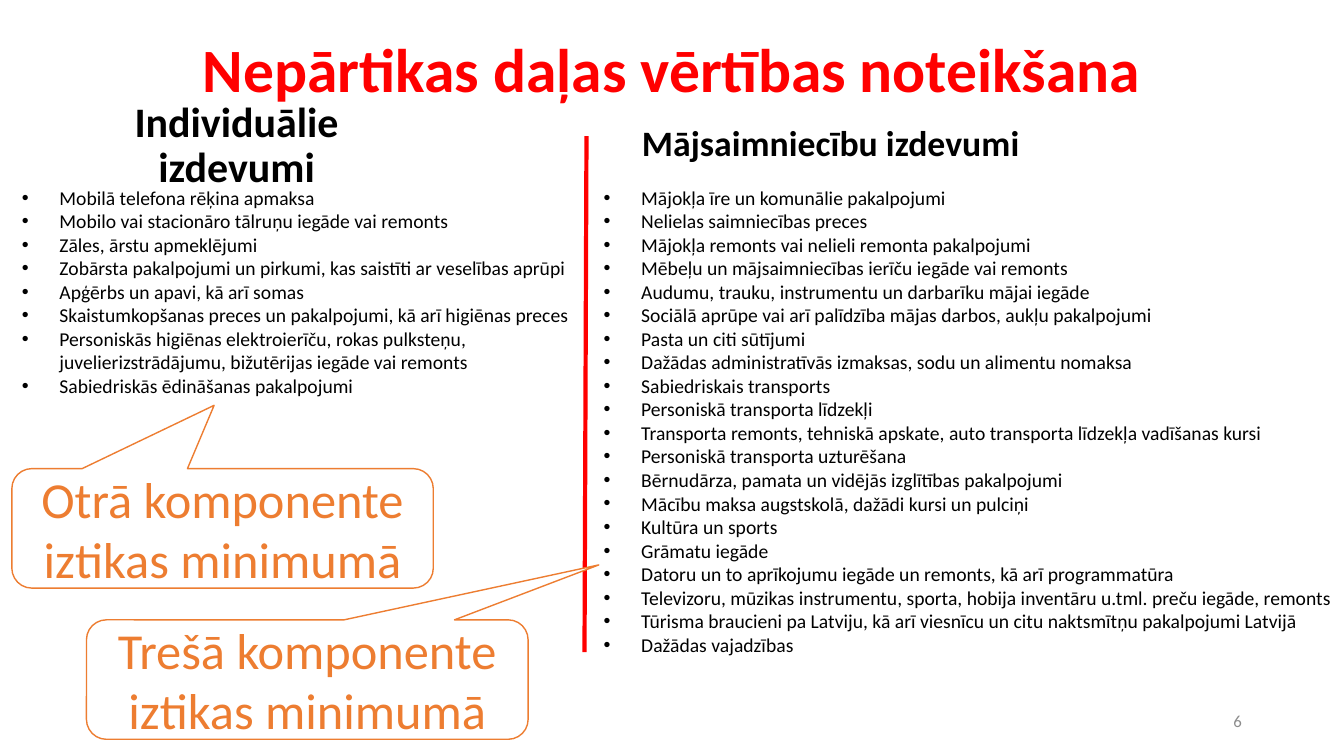
from dataclasses import dataclass

from lxml.etree import SubElement
from pptx import Presentation
from pptx.dml.color import RGBColor as Rgb
from pptx.enum.shapes import MSO_CONNECTOR as Connector, MSO_SHAPE as Preset
from pptx.enum.text import MSO_ANCHOR as Anchor, MSO_AUTO_SIZE as AutoSize, PP_ALIGN as Align
from pptx.oxml.ns import qn
from pptx.util import Cm, Pt


@dataclass(frozen=True)
class Theme:
    font: str = "Calibri"
    red: Rgb = Rgb(0xFF, 0x00, 0x00)
    orange: Rgb = Rgb(0xED, 0x7D, 0x31)
    black: Rgb = Rgb(0x00, 0x00, 0x00)
    white: Rgb = Rgb(0xFF, 0xFF, 0xFF)
    grey: Rgb = Rgb(0x8C, 0x8C, 0x8C)
    title: float = 44
    callout: float = 36
    left_heading: float = 30
    right_heading: float = 25.5
    body: float = 14
    number: float = 12


theme = Theme()


def write(box, *lines, size, color=theme.black, bold=False, align=Align.CENTER,
          anchor=Anchor.MIDDLE, spacing=1.0, bullet=False):
    frame = box.text_frame
    frame.word_wrap = True
    frame.auto_size = AutoSize.NONE
    frame.vertical_anchor = anchor
    for index, line in enumerate(lines):
        para = frame.add_paragraph() if index else frame.paragraphs[0]
        para.alignment = align
        para.line_spacing = spacing
        span = para.add_run()
        span.text = line
        span.font.name = theme.font
        span.font.size = Pt(size)
        span.font.bold = bold
        span.font.color.rgb = color
        if bullet:
            properties = para._p.get_or_add_pPr()
            properties.set("marL", str(Cm(0.95)))
            properties.set("indent", str(-Cm(0.95)))
            SubElement(properties, qn("a:buFont"), typeface="Arial")
            SubElement(properties, qn("a:buChar"), char="•")


deck = Presentation()
deck.slide_width = Cm(33.87)
deck.slide_height = Cm(19.05)
page = deck.slides.add_slide(deck.slide_layouts[5])

title = page.shapes.title
title.left, title.top, title.width, title.height = Cm(2.34), Cm(0), Cm(29.21), Cm(3.68)
write(title, "Nepārtikas daļas vērtības noteikšana", size=theme.title,
      color=theme.red, bold=True, spacing=0.9)

number = page.shapes.add_textbox(Cm(23.93), Cm(17.65), Cm(7.62), Cm(1.02))
write(number, "6", size=theme.number, color=theme.grey, align=Align.RIGHT)

individual_expenses = [
    "Mobilā telefona rēķina apmaksa",
    "Mobilo vai stacionāro tālruņu iegāde vai remonts",
    "Zāles, ārstu apmeklējumi",
    "Zobārsta pakalpojumi un pirkumi, kas saistīti ar veselības aprūpi",
    "Apģērbs un apavi, kā arī somas",
    "Skaistumkopšanas preces un pakalpojumi, kā arī higiēnas preces",
    "Personiskās higiēnas elektroierīču, rokas pulksteņu, juvelierizstrādājumu, "
    "bižutērijas iegāde vai remonts",
    "Sabiedriskās ēdināšanas pakalpojumi",
]
household_expenses = [
    "Mājokļa īre un komunālie pakalpojumi",
    "Nelielas saimniecības preces",
    "Mājokļa remonts vai nelieli remonta pakalpojumi",
    "Mēbeļu un mājsaimniecības ierīču iegāde vai remonts",
    "Audumu, trauku, instrumentu un darbarīku mājai iegāde",
    "Sociālā aprūpe vai arī palīdzība mājas darbos, aukļu pakalpojumi",
    "Pasta un citi sūtījumi",
    "Dažādas administratīvās izmaksas, sodu un alimentu nomaksa",
    "Sabiedriskais transports",
    "Personiskā transporta līdzekļi",
    "Transporta remonts, tehniskā apskate, auto transporta līdzekļa vadīšanas kursi",
    "Personiskā transporta uzturēšana",
    "Bērnudārza, pamata un vidējās izglītības pakalpojumi",
    "Mācību maksa augstskolā, dažādi kursi un pulciņi",
    "Kultūra un sports",
    "Grāmatu iegāde",
    "Datoru un to aprīkojumu iegāde un remonts, kā arī programmatūra",
    "Televizoru, mūzikas instrumentu, sporta, hobija inventāru u.tml. preču iegāde, remonts",
    "Tūrisma braucieni pa Latviju, kā arī viesnīcu un citu naktsmītņu pakalpojumi Latvijā",
    "Dažādas vajadzības",
]
for left, width, height, expenses in [
    (0.3, 14.86, 5.64, individual_expenses),
    (14.96, 18.9, 12.22, household_expenses),
]:
    column = page.shapes.add_textbox(Cm(left), Cm(4.55), Cm(width), Cm(height))
    write(column, *expenses, size=theme.body, align=Align.LEFT, anchor=Anchor.TOP, bullet=True)

divider = page.shapes.add_connector(
    Connector.STRAIGHT, Cm(14.78), Cm(3.43), Cm(14.73), Cm(16.43))
divider.line.color.rgb = theme.red
divider.line.width = Pt(3)
SubElement(divider._element.spPr, qn("a:effectLst"))

for left, width, heading, size, spacing in [
    (1.24, 9.45, "Individuālie izdevumi", theme.left_heading, 0.9),
    (15.9, 10.08, "Mājsaimniecību izdevumi", theme.right_heading, 0.8),
]:
    box = page.shapes.add_textbox(Cm(left), Cm(2.77), Cm(width), Cm(1.83))
    write(box, heading, size=size, bold=True, spacing=spacing)

for left, top, width, tip_x, tip_y, label in [
    (0.3, 11.81, 10.62, -0.02, -1.03, "Otrā komponente iztikas minimumā"),
    (2.18, 15.62, 11.13, 0.66, -0.96, "Trešā komponente iztikas minimumā"),
]:
    callout = page.shapes.add_shape(
        Preset.ROUNDED_RECTANGULAR_CALLOUT, Cm(left), Cm(top), Cm(width), Cm(3.01))
    callout.adjustments[0] = tip_x
    callout.adjustments[1] = tip_y
    callout.shadow.inherit = False
    callout.fill.solid()
    callout.fill.fore_color.rgb = theme.white
    callout.line.color.rgb = theme.orange
    callout.line.width = Pt(1)
    write(callout, label, size=theme.callout, color=theme.orange)

deck.save("out.pptx")
